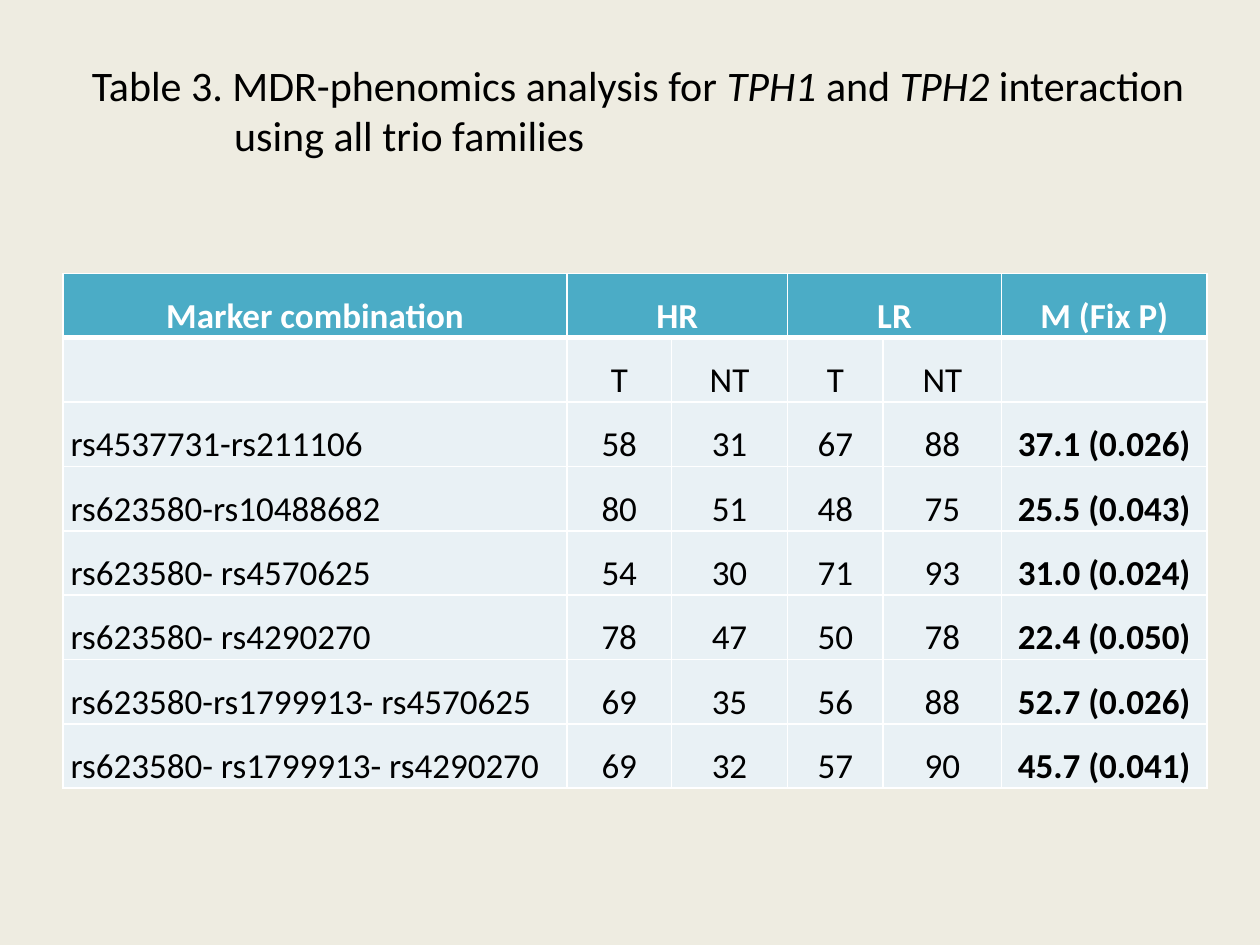
from typing import NamedTuple

from lxml import etree
from pptx import Presentation
from pptx.dml.color import RGBColor
from pptx.enum.text import MSO_AUTO_SIZE, PP_ALIGN
from pptx.oxml.ns import qn
from pptx.util import Inches, Pt

LEFT, CENTER, JUSTIFY = PP_ALIGN.LEFT, PP_ALIGN.CENTER, PP_ALIGN.JUSTIFY
FIT_SHAPE = MSO_AUTO_SIZE.SHAPE_TO_FIT_TEXT

BLACK = RGBColor(0x00, 0x00, 0x00)
WHITE = RGBColor(0xFF, 0xFF, 0xFF)
CREAM = RGBColor(0xEE, 0xEC, 0xE1)
TEAL = RGBColor(0x4B, 0xAC, 0xC6)
PALE_BLUE = RGBColor(0xE9, 0xF1, 0xF5)
FONT = "Calibri"


class Marker(NamedTuple):
    combination: str
    hr_t: str
    hr_nt: str
    lr_t: str
    lr_nt: str
    m_fix_p: str


HEADER = Marker("Marker combination", "HR", "", "LR", "", "M (Fix P)")
SUBHEADER = Marker("", "T", "NT", "T", "NT", "")
MARKERS = [
    Marker("rs4537731-rs211106", "58", "31", "67", "88", "37.1 (0.026)"),
    Marker("rs623580-rs10488682", "80", "51", "48", "75", "25.5 (0.043)"),
    Marker("rs623580- rs4570625", "54", "30", "71", "93", "31.0 (0.024)"),
    Marker("rs623580- rs4290270", "78", "47", "50", "78", "22.4 (0.050)"),
    Marker("rs623580-rs1799913- rs4570625", "69", "35", "56", "88", "52.7 (0.026)"),
    Marker("rs623580- rs1799913- rs4290270", "69", "32", "57", "90", "45.7 (0.041)"),
]
ROWS = [HEADER, SUBHEADER, *MARKERS]
COL_WIDTHS = [4, 0.83, 0.92, 0.76, 0.94, 1.63]
ROW_HEIGHT = 0.5
HR_COL, LR_COL = 1, 3
LAST_COL = len(COL_WIDTHS) - 1

TITLE_RUNS = [
    ("Table 3. MDR-phenomics analysis for ", False),
    ("TPH1", True),
    (" and ", False),
    ("TPH2", True),
    (" interaction", False),
]


def set_borders(cell, top: float, bottom: float) -> None:
    """Draw white cell borders; top and bottom widths are in points."""
    tcPr = cell._tc.get_or_add_tcPr()
    widths = {"lnL": 1, "lnR": 1, "lnT": top, "lnB": bottom}
    for i, (tag, width) in enumerate(widths.items()):
        ln = etree.Element(qn(f"a:{tag}"), w=str(Pt(width)))
        fill = etree.SubElement(ln, qn("a:solidFill"))
        etree.SubElement(fill, qn("a:srgbClr"), val=str(WHITE))
        tcPr.insert(i, ln)


def style_font(p, size: float, color: RGBColor, bold: bool = False) -> None:
    p.font.name = FONT
    p.font.size = Pt(size)
    p.font.bold = bold
    p.font.color.rgb = color


def fill_cell(cell, text: str, row: int, col: int) -> None:
    is_header = row == 0
    cell.margin_left = cell.margin_right = Inches(0.06)
    cell.margin_top = cell.margin_bottom = 0
    cell.fill.solid()
    cell.fill.fore_color.rgb = TEAL if is_header else PALE_BLUE
    set_borders(cell, top=3 if row == 1 else 1, bottom=3 if is_header else 1)
    if text:
        cell.text = text
        p = cell.text_frame.paragraphs[0]
        p.alignment = LEFT if col == 0 and not is_header else CENTER
        p.line_spacing = 1.5
        style_font(p, 20, WHITE if is_header else BLACK, is_header or col == LAST_COL)


def add_marker_table(s) -> None:
    table = s.shapes.add_table(
        len(ROWS), len(COL_WIDTHS), Inches(0.5), Inches(2.17),
        Inches(sum(COL_WIDTHS)), Inches(ROW_HEIGHT * len(ROWS)),
    ).table
    table.horz_banding = False
    for column, width in zip(table.columns, COL_WIDTHS):
        column.width = Inches(width)
    for r, marker in enumerate(ROWS):
        for c, text in enumerate(marker):
            fill_cell(table.cell(r, c), text, r, c)
    for col in (HR_COL, LR_COL):
        table.cell(0, col).merge(table.cell(0, col + 1))


def add_title(s) -> None:
    sp = s.shapes.add_textbox(Inches(0.63), Inches(0.42), Inches(8.95), Inches(0.91))
    tf = sp.text_frame
    tf.word_wrap = False
    tf.auto_size = FIT_SHAPE
    first, second = tf.paragraphs[0], tf.add_paragraph()
    for text, italic in TITLE_RUNS:
        r = first.add_run()
        r.text = text
        r.font.italic = italic
    second.text = "using all trio families"
    second._p.get_or_add_pPr().set("marL", str(Inches(1.13)))
    for p in (first, second):
        p.alignment = JUSTIFY
        style_font(p, 24, BLACK)


def main() -> None:
    prs = Presentation()
    prs.slide_width, prs.slide_height = Inches(10), Inches(7.5)
    s = prs.slides.add_slide(prs.slide_layouts[6])
    s.background.fill.solid()
    s.background.fill.fore_color.rgb = CREAM
    add_marker_table(s)
    add_title(s)
    prs.save("out.pptx")


if __name__ == "__main__":
    main()
